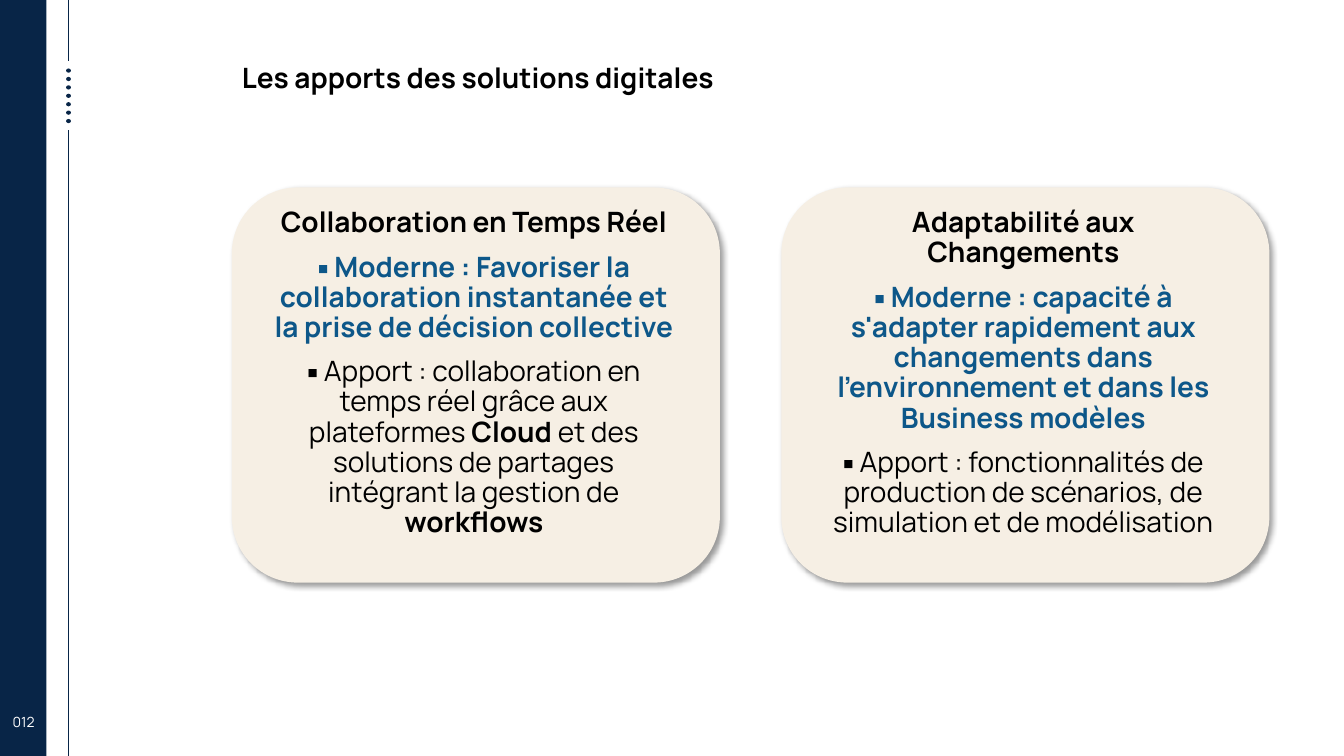
from lxml import etree
from pptx import Presentation
from pptx.dml.color import RGBColor
from pptx.enum.dml import MSO_LINE
from pptx.enum.shapes import MSO_CONNECTOR, MSO_SHAPE
from pptx.enum.text import PP_ALIGN
from pptx.oxml.ns import qn
from pptx.util import Inches, Pt

RECT, ROUNDED = MSO_SHAPE.RECTANGLE, MSO_SHAPE.ROUNDED_RECTANGLE
LEFT, CENTER = PP_ALIGN.LEFT, PP_ALIGN.CENTER
FONT = "Manrope"
COLORS = {"navy": "082547", "cream": "F6EFE4", "blue": "0D5789",
          "black": "000000", "white": "FFFFFF"}

TITLE = "Les apports des solutions digitales"
PAGE_NUMBER = "012"
# Each card: heading, modern approach, contribution as (text, bold) runs
CARDS = [
    ("Collaboration en Temps Réel",
     "▪ Moderne : Favoriser la collaboration instantanée et la prise de "
     "décision collective",
     [("▪ Apport : collaboration en temps réel grâce aux plateformes ", False),
      ("Cloud", True),
      (" et des solutions de partages intégrant la gestion de ", False),
      ("workflows", True)]),
    ("Adaptabilité aux Changements",
     "▪ Moderne : capacité à s'adapter rapidement aux changements dans "
     "l’environnement et dans les Business modèles",
     [("▪ Apport : fonctionnalités de production de scénarios, de simulation "
       "et de modélisation", False)]),
]
# Vertical rule segments: top, bottom, width in points, dotted
RULE_X = 0.68
RULE = [(0, 0.61, 0.5, False), (0.7, 1.23, 3, True), (1.29, 7.5, 0.5, False)]

CARD_LEFT, CARD_TOP, CARD_W, CARD_H = 2.3, 1.86, 4.84, 3.92
CARD_STEP = 5.45
TEXT_DX, TEXT_DY, TEXT_W, TEXT_H = 0.3, 0.16, 4.2, 1.47


def rgb(name):
    return RGBColor.from_string(COLORS[name])


def add_rule(s, top, bottom, width, dotted):
    rule = s.shapes.add_connector(MSO_CONNECTOR.STRAIGHT, Inches(RULE_X), Inches(top),
                                  Inches(RULE_X), Inches(bottom))
    rule.line.color.rgb = rgb("navy")
    rule.line.width = Pt(width)
    if dotted:
        rule.line.dash_style = MSO_LINE.ROUND_DOT
        rule.line._get_or_add_ln().set("cap", "rnd")
    etree.SubElement(rule._element.spPr, qn("a:effectLst"))


def add_panel(s, kind, left, top, width, height, color):
    sp = s.shapes.add_shape(kind, Inches(left), Inches(top), Inches(width), Inches(height))
    sp.shadow.inherit = False
    sp.fill.solid()
    sp.fill.fore_color.rgb = rgb(color)
    sp.line.fill.background()
    return sp


def add_shadow(sp):
    """Soft black shadow toward the lower right."""
    effects = sp._element.spPr.find(qn("a:effectLst"))
    shadow = etree.SubElement(effects, qn("a:outerShdw"), blurRad=str(Pt(4)),
                              dist=str(Pt(3)), dir="2700000", algn="tl", rotWithShape="0")
    color = etree.SubElement(shadow, qn("a:srgbClr"), val=COLORS["black"])
    etree.SubElement(color, qn("a:alpha"), val="40000")


def add_text(s, left, top, width, height):
    box = s.shapes.add_textbox(Inches(left), Inches(top), Inches(width), Inches(height))
    box.text_frame.word_wrap = True
    return box.text_frame


def style(p, size, color, align, bold=None):
    p.alignment = align
    p.font.name, p.font.size, p.font.bold = FONT, Pt(size), bold
    p.font.color.rgb = rgb(color)


def add_card(s, left, heading, modern, contribution):
    add_shadow(add_panel(s, ROUNDED, left, CARD_TOP, CARD_W, CARD_H, "cream"))
    tf = add_text(s, left + TEXT_DX, CARD_TOP + TEXT_DY, TEXT_W, TEXT_H)
    paragraphs = [([(heading, True)], "black"), ([(modern, True)], "blue"),
                  (contribution, "black")]
    for i, (runs, color) in enumerate(paragraphs):
        p = tf.add_paragraph() if i else tf.paragraphs[0]
        style(p, 20, color, CENTER)
        p.line_spacing, p.space_before = 0.9, Pt(10)
        for text, bold in runs:
            r = p.add_run()
            r.text, r.font.bold = text, bold


def main():
    prs = Presentation()
    prs.slide_width, prs.slide_height = Inches(13.33), Inches(7.5)
    s = prs.slides.add_slide(prs.slide_layouts[6])

    for segment in RULE:
        add_rule(s, *segment)
    add_panel(s, RECT, 0, 0, 0.46, 7.5, "navy")

    tf = add_text(s, 0.07, 7.08, 0.33, 0.17)
    tf.margin_left = tf.margin_right = tf.margin_top = tf.margin_bottom = 0
    tf.text = PAGE_NUMBER
    style(tf.paragraphs[0], 10, "white", CENTER)

    tf = add_text(s, 2.3, 0.55, 9.29, 0.44)
    tf.text = TITLE
    style(tf.paragraphs[0], 20, "black", LEFT, bold=True)

    for i, card in enumerate(CARDS):
        add_card(s, CARD_LEFT + i * CARD_STEP, *card)
    prs.save("out.pptx")


if __name__ == "__main__":
    main()
